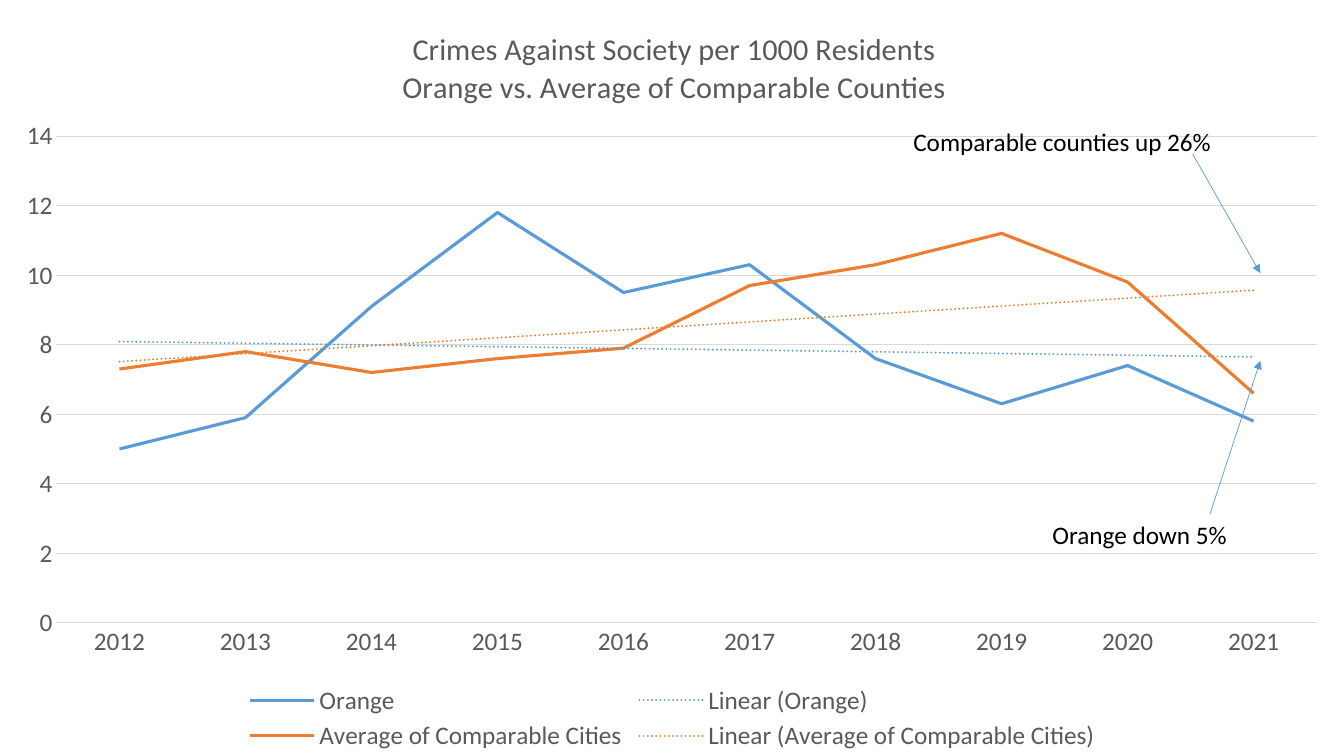
from lxml import etree
from pptx import Presentation
from pptx import util as u
from pptx.chart.data import CategoryChartData
from pptx.dml.color import RGBColor
from pptx.enum import chart as charts, shapes, text
from pptx.oxml import parse_xml
from pptx.oxml.ns import nsdecls, qn

PX = 9144  # 100 px to the inch
WIDTH, HEIGHT = 1333, 750
BLUE, ORANGE, GRID, GREY, BLACK = "5B9BD5", "ED7D31", "D9D9D9", "595959", "000000"


def style_font(font, size, color):
    font.name = "Calibri"
    font.size = u.Pt(size)
    font.bold = False
    font.color.rgb = RGBColor.from_string(color)


def place(element, index, x, y, w=None, h=None):
    """Give a chart part a manual layout, in px of the slide."""
    for old in element.findall(qn("c:layout")):
        element.remove(old)
    inner = '<c:layoutTarget val="inner"/>' if element.tag == qn("c:plotArea") else ""
    sizes = [("x", x, WIDTH), ("y", y, HEIGHT), ("w", w, WIDTH), ("h", h, HEIGHT)]
    modes = '<c:xMode val="edge"/><c:yMode val="edge"/>'
    values = "".join(f'<c:{name} val="{size / full:.4f}"/>'
                     for name, size, full in sizes if size is not None)
    element.insert(index, parse_xml(
        f'<c:layout {nsdecls("c")}><c:manualLayout>{inner}{modes}{values}'
        '</c:manualLayout></c:layout>'))


deck = Presentation()
deck.slide_width, deck.slide_height = WIDTH * PX, HEIGHT * PX
page = deck.slides.add_slide(deck.slide_layouts[6])

# Chart
data = CategoryChartData(number_format="#,##0")
data.categories = [str(year) for year in range(2012, 2022)]
data.add_series("Orange", [5, 5.9, 9.1, 11.8, 9.5, 10.3, 7.6, 6.3, 7.4, 5.8])
data.add_series("Average of Comparable Cities",
                [7.3, 7.8, 7.2, 7.6, 7.9, 9.7, 10.3, 11.2, 9.8, 6.6])
chart = page.shapes.add_chart(charts.XL_CHART_TYPE.LINE, 0, 0,
                              WIDTH * PX, HEIGHT * PX, data).chart
style_font(chart.font, 18, GREY)

title = chart.chart_title.text_frame
title.text = "Crimes Against Society per 1000 Residents\nOrange vs. Average of Comparable Counties"
for para in title.paragraphs:
    style_font(para.font, 21.6, GREY)

chart.has_legend = True
chart.legend.position = charts.XL_LEGEND_POSITION.BOTTOM
chart.legend.include_in_layout = False
style_font(chart.legend.font, 18, GREY)

for axis in (chart.category_axis, chart.value_axis):
    axis.major_tick_mark = axis.minor_tick_mark = charts.XL_TICK_MARK.NONE
    style_font(axis.tick_labels.font, 18, GREY)
chart.value_axis.minimum_scale = 0
chart.value_axis.maximum_scale = 14
chart.value_axis.major_unit = 2
chart.value_axis.tick_labels.number_format = "#,##0"
chart.value_axis.tick_labels.number_format_is_linked = False
chart.value_axis.format.line.fill.background()
for line in (chart.category_axis.format.line, chart.value_axis.major_gridlines.format.line):
    line.color.rgb = RGBColor.from_string(GRID)
    line.width = u.Pt(0.75)

plot = chart.plots[0]
plot.vary_by_categories = False
for series, color in zip(plot.series, (BLUE, ORANGE)):
    series.smooth = False
    series.marker.style = charts.XL_MARKER_STYLE.NONE
    series.format.line.color.rgb = RGBColor.from_string(color)
    series.format.line.width = u.Pt(2.25)
    series._element.find(qn("c:cat")).addprevious(parse_xml(
        f'<c:trendline {nsdecls("c", "a")}><c:spPr><a:ln w="{u.Pt(1.5)}" cap="rnd"><a:solidFill>'
        f'<a:srgbClr val="{color}"/></a:solidFill><a:prstDash val="sysDot"/></a:ln></c:spPr>'
        '<c:trendlineType val="linear"/><c:dispRSqr val="0"/><c:dispEq val="0"/></c:trendline>'))

chart_xml = chart._chartSpace.find(qn("c:chart"))
place(chart_xml.find(qn("c:plotArea")), 0, 56, 135, 1250, 483)
place(chart_xml.find(qn("c:title")), 1, 396, 26)
place(chart_xml.find(qn("c:legend")), 1, 239, 675, 856, 75)

# Notes on the two trends, each with its arrow
notes = [
    ("Comparable counties up 26%", (896, 120, 325, 40), False, (1183, 153, 1250, 271)),
    ("Orange down 5%", (1034, 510, 216, 40), True, (1200, 510, 1250, 358)),
]
for wording, area, wraps, ends in notes:
    box = page.shapes.add_textbox(*(n * PX for n in area))
    frame = box.text_frame
    frame.word_wrap = wraps
    frame.auto_size = text.MSO_AUTO_SIZE.SHAPE_TO_FIT_TEXT
    frame.text = wording
    style_font(frame.paragraphs[0].font, 18, BLACK)

    arrow = page.shapes.add_connector(shapes.MSO_CONNECTOR.STRAIGHT, *(n * PX for n in ends))
    arrow.line.color.rgb = RGBColor.from_string(BLUE)
    arrow.line.width = u.Pt(0.5)
    etree.SubElement(arrow.line._get_or_add_ln(), qn("a:tailEnd"), type="triangle")
    etree.SubElement(arrow._element.spPr, qn("a:effectLst"))

deck.save("out.pptx")
